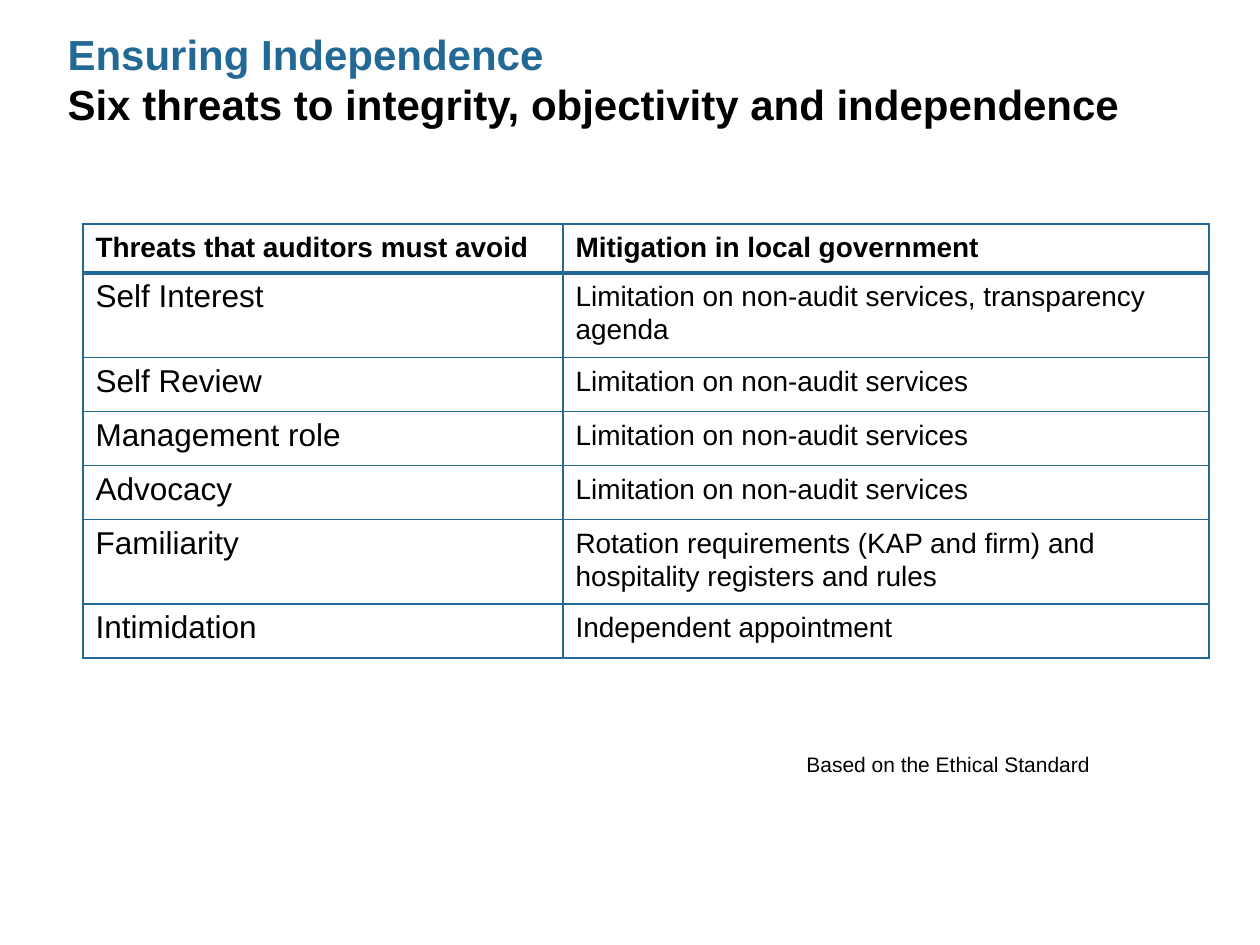
import pptx
import pptx.dml.color
import pptx.enum.text
import pptx.oxml.ns
import pptx.util
from lxml import etree

PX = 914400 / 126
BLUE = "236995"
BLACK = "000000"

HEADER = ("Threats that auditors must avoid", "Mitigation in local government")
THREATS = [
    ("Self Interest", "Limitation on non-audit services, transparency agenda"),
    ("Self Review", "Limitation on non-audit services"),
    ("Management role", "Limitation on non-audit services"),
    ("Advocacy", "Limitation on non-audit services"),
    ("Familiarity", "Rotation requirements (KAP and firm) and hospitality registers and rules"),
    ("Intimidation", "Independent appointment"),
]
COLUMN_WIDTHS = (480, 646)
ROW_HEIGHTS = (49, 84, 54, 54, 54, 84, 54)


def px(length):
    return pptx.util.Emu(round(length * PX))


def color(value):
    return pptx.dml.color.RGBColor.from_string(value)


def add_text(paragraph, text, size=16, bold=False, fill=BLACK, spacing=None):
    run = paragraph.add_run()
    run.text = text
    run.font.name = "Arial"
    run.font.size = pptx.util.Pt(size)
    run.font.bold = bold
    run.font.color.rgb = color(fill)
    if spacing:
        paragraph.line_spacing = spacing


def set_border(cell, side, width):
    line = etree.SubElement(
        cell._tc.get_or_add_tcPr(),
        pptx.oxml.ns.qn(f"a:ln{side}"),
        w=str(pptx.util.Pt(width)),
    )
    fill = etree.SubElement(line, pptx.oxml.ns.qn("a:solidFill"))
    etree.SubElement(fill, pptx.oxml.ns.qn("a:srgbClr"), val=BLUE)


def place_title(slide, left, top, width, height):
    title = slide.shapes.title
    title.left, title.top = px(left), px(top)
    title.width, title.height = px(width), px(height)
    frame = title.text_frame
    frame.word_wrap = True
    frame.vertical_anchor = pptx.enum.text.MSO_ANCHOR.MIDDLE
    paragraph = frame.paragraphs[0]
    paragraph.alignment = pptx.enum.text.PP_ALIGN.LEFT
    add_text(paragraph, "Ensuring Independence", size=24, bold=True, fill=BLUE)
    paragraph.add_line_break()
    add_text(paragraph, "Six threats to integrity, objectivity and independence",
             size=24, bold=True)


def place_threat_table(slide, left, top):
    rows = [HEADER] + THREATS
    table = slide.shapes.add_table(
        len(rows), len(HEADER), px(left), px(top),
        px(sum(COLUMN_WIDTHS)), px(sum(ROW_HEIGHTS)),
    ).table
    table.first_row = table.horz_banding = False
    for column, width in zip(table.columns, COLUMN_WIDTHS):
        column.width = px(width)
    for row, height in zip(table.rows, ROW_HEIGHTS):
        row.height = px(height)

    for row_index, texts in enumerate(rows):
        is_header = row_index == 0
        for column_index, text in enumerate(texts):
            cell = table.cell(row_index, column_index)
            is_threat = column_index == 0 and not is_header
            add_text(cell.text_frame.paragraphs[0], text,
                     size=18 if is_threat else 16, bold=is_header,
                     spacing=None if is_threat else 1.07)
            # The rule under the header is thicker than the others
            set_border(cell, "L", 1)
            set_border(cell, "R", 1)
            set_border(cell, "T", 3 if row_index == 1 else 1)
            set_border(cell, "B", 3 if is_header else 1)
            cell.fill.background()


def place_source_note(slide, left, top, width, height):
    box = slide.shapes.add_textbox(px(left), px(top), px(width), px(height))
    box.text_frame.word_wrap = True
    add_text(box.text_frame.paragraphs[0], "Based on the Ethical Standard", size=12)


def main():
    presentation = pptx.Presentation()
    presentation.slide_width, presentation.slide_height = px(1260), px(945)
    slide = presentation.slides.add_slide(presentation.slide_layouts[5])
    place_title(slide, 55, 0, 1134, 158)
    place_source_note(slide, 794, 745, 310, 38)
    place_threat_table(slide, 83, 224)
    presentation.save("out.pptx")


if __name__ == "__main__":
    main()
